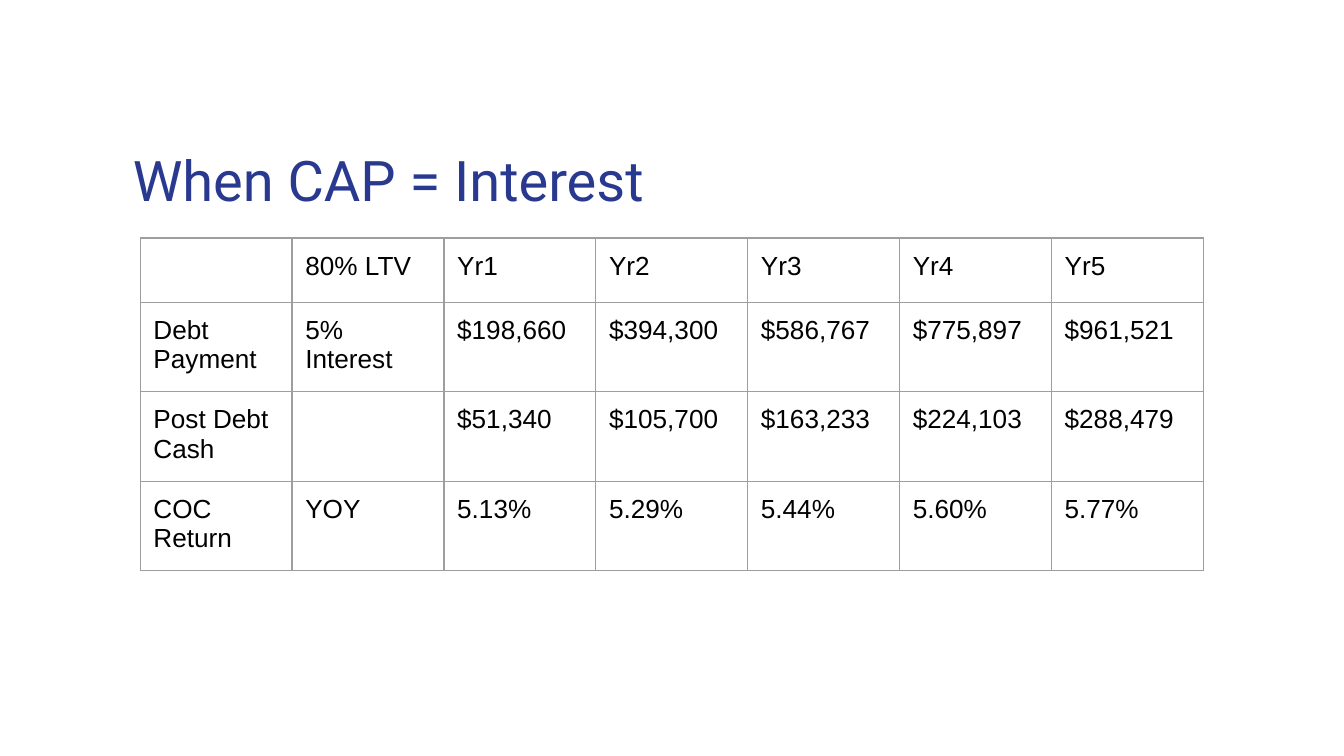
from dataclasses import dataclass

from lxml import etree
from pptx import Presentation
from pptx.dml.color import RGBColor
from pptx.enum import text
from pptx.oxml import ns
from pptx.util import Cm, Pt


@dataclass(frozen=True)
class Theme:
    heading: RGBColor = RGBColor(0x2A, 0x39, 0x90)
    body: RGBColor = RGBColor(0, 0, 0)
    border: str = "9E9E9E"
    border_width: int = Pt(0.75)
    heading_font: str = "Roboto"
    body_font: str = "Arial"
    heading_size: int = Pt(30)
    body_size: int = Pt(14)
    inset: int = Cm(0.25)


theme = Theme()


def style_text(holder, paragraph, font, size, color):
    """Set the insets of a text frame or cell and the font of its paragraph."""
    holder.margin_left = holder.margin_right = theme.inset
    holder.margin_top = holder.margin_bottom = theme.inset
    paragraph.font.name = font
    paragraph.font.size = size
    paragraph.font.color.rgb = color


def add_borders(cell):
    """Draw a thin line on all four sides of a cell."""
    properties = cell._tc.get_or_add_tcPr()
    for position, side in enumerate(("lnL", "lnR", "lnT", "lnB")):
        line = etree.Element(ns.qn(f"a:{side}"), w=str(theme.border_width))
        fill = etree.SubElement(line, ns.qn("a:solidFill"))
        etree.SubElement(fill, ns.qn("a:srgbClr"), val=theme.border)
        properties.insert(position, line)


# Slide
deck = Presentation()
deck.slide_width, deck.slide_height = Cm(25.4), Cm(14.29)
slide = deck.slides.add_slide(deck.slide_layouts[6])

# Heading
heading = slide.shapes.add_textbox(Cm(2.26), Cm(2.51), Cm(21.56), Cm(1.68)).text_frame
heading.word_wrap = True
heading.vertical_anchor = text.MSO_ANCHOR.TOP
heading.text = "When CAP = Interest"
style_text(heading, heading.paragraphs[0], theme.heading_font,
           theme.heading_size, theme.heading)

# Debt and return by year
yearly_returns = [
    ["", "80% LTV", "Yr1", "Yr2", "Yr3", "Yr4", "Yr5"],
    ["Debt Payment", "5% Interest", "$198,660", "$394,300", "$586,767", "$775,897", "$961,521"],
    ["Post Debt Cash", "", "$51,340", "$105,700", "$163,233", "$224,103", "$288,479"],
    ["COC Return", "YOY", "5.13%", "5.29%", "5.44%", "5.60%", "5.77%"],
]
row_heights = [Cm(1.22)] + [Cm(1.62)] * 3
column_width = Cm(2.87)
column_count = len(yearly_returns[0])

returns_table = slide.shapes.add_table(
    len(yearly_returns), column_count, Cm(2.65), Cm(4.5),
    column_width * column_count, sum(row_heights)).table
returns_table.first_row = returns_table.horz_banding = False
for column in returns_table.columns:
    column.width = column_width

for row, height, values in zip(returns_table.rows, row_heights, yearly_returns):
    row.height = height
    for cell, value in zip(row.cells, values):
        cell.text = value
        style_text(cell, cell.text_frame.paragraphs[0], theme.body_font,
                   theme.body_size, theme.body)
        cell.fill.background()
        add_borders(cell)

deck.save("out.pptx")
